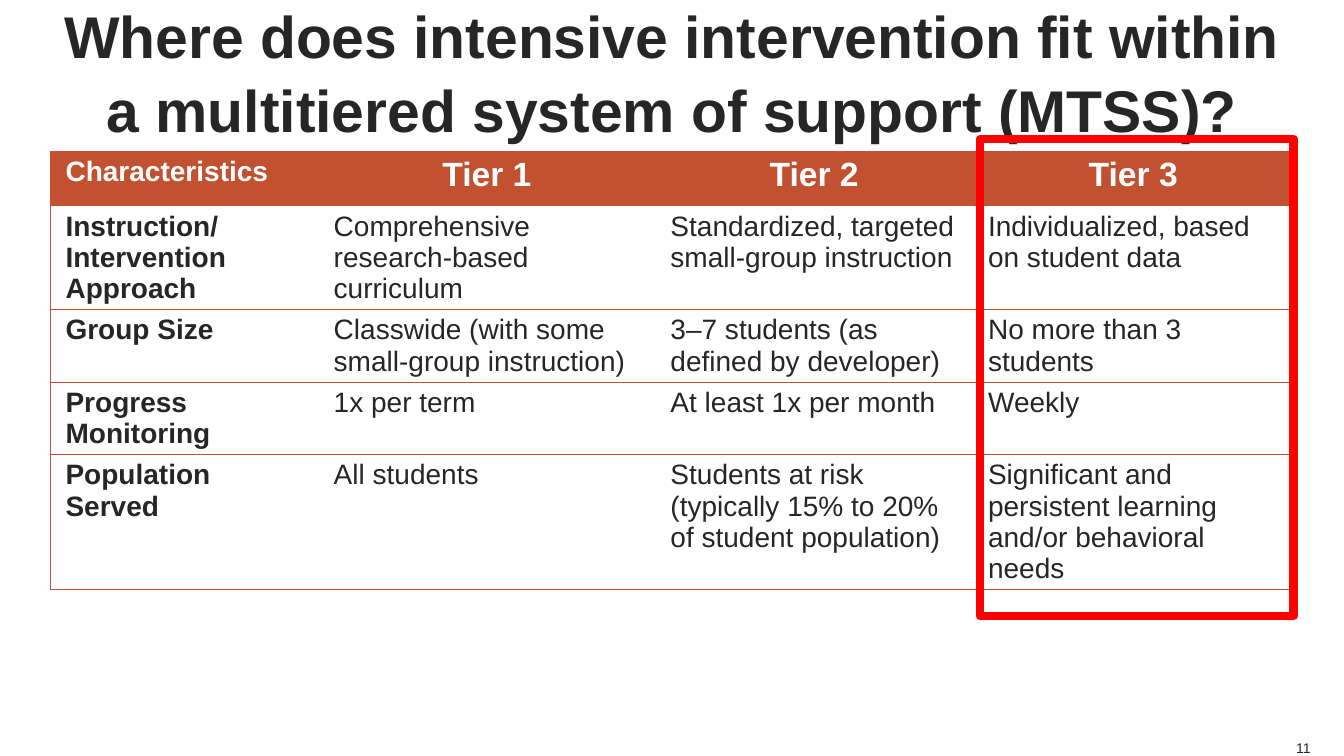
from pptx import Presentation
from pptx.dml.color import RGBColor
from pptx.enum.shapes import MSO_SHAPE
from pptx.enum.text import MSO_ANCHOR, PP_ALIGN
from pptx.oxml import parse_xml
from pptx.oxml.ns import nsdecls
from pptx.util import Inches, Pt

LEFT, CENTER, RIGHT = PP_ALIGN.LEFT, PP_ALIGN.CENTER, PP_ALIGN.RIGHT
TOP, MIDDLE, BOTTOM = MSO_ANCHOR.TOP, MSO_ANCHOR.MIDDLE, MSO_ANCHOR.BOTTOM
RECTANGLE = MSO_SHAPE.RECTANGLE
TITLE_ONLY = 5

COLUMN_WIDTHS = [2.66, 3.34, 3.15, 3.18]
ROW_HEIGHTS = [0.54, 0.66, 0.6, 0.58, 0.85]
TIERS = [
    ["Characteristics", "Tier 1", "Tier 2", "Tier 3"],
    ["Instruction/\nIntervention Approach",
     "Comprehensive research-based curriculum",
     "Standardized, targeted small-group instruction",
     "Individualized, based on student data"],
    ["Group Size",
     "Classwide (with some small-group instruction)",
     "3–7 students (as defined by developer)",
     "No more than 3 students"],
    ["Progress Monitoring", "1x per term", "At least 1x per month", "Weekly"],
    ["Population Served",
     "All students",
     "Students at risk (typically 15% to 20% of student population)",
     "Significant and persistent learning and/or behavioral needs"],
]


def rgb(value):
    return RGBColor.from_string(value)


def write(frame, text, size=20, color="262626", bold=False, align=LEFT,
          spacing=None):
    """Fill a text frame, one paragraph for each line of text."""
    for index, line in enumerate(text.split("\n")):
        paragraph = frame.add_paragraph() if index else frame.paragraphs[0]
        paragraph.alignment = align
        paragraph.line_spacing = spacing
        run = paragraph.add_run()
        run.text = line
        run.font.name = "Arial"
        run.font.size = Pt(size)
        run.font.bold = bold
        run.font.color.rgb = rgb(color)


class TierSlide:
    RUST = "C25131"
    WHITE = "FFFFFF"
    RED = "FF0000"

    def __init__(self, deck):
        self.slide = deck.slides.add_slide(deck.slide_layouts[TITLE_ONLY])
        self.shapes = self.slide.shapes

    def place(self, shape, box):
        shape.left, shape.top, shape.width, shape.height = map(Inches, box)

    def frame(self, shape, anchor, wrap=True):
        frame = shape.text_frame
        frame.margin_left = frame.margin_right = 0
        frame.margin_top = frame.margin_bottom = 0
        frame.vertical_anchor = anchor
        frame.word_wrap = wrap
        return frame

    def title(self, text, box):
        heading = self.shapes.title
        self.place(heading, box)
        write(self.frame(heading, MIDDLE), text, size=42, bold=True,
              align=CENTER, spacing=1.04)

    def borders(self, cell, sides):
        """Rule the named sides in rust and clear the others."""
        properties = cell._tc.get_or_add_tcPr()
        for index, side in enumerate("LRTB"):
            paint = "<a:noFill/>"
            if side in sides:
                paint = (f'<a:solidFill><a:srgbClr val="{self.RUST}"/>'
                         "</a:solidFill>")
            properties.insert(index, parse_xml(
                f'<a:ln{side} {nsdecls("a")} w="{Pt(0.5)}">{paint}</a:ln{side}>'))

    def table(self, rows, box, widths, heights):
        table = self.shapes.add_table(
            len(rows), len(widths), *map(Inches, box)).table
        for column, width in zip(table.columns, widths):
            column.width = Inches(width)
        for row, height in zip(table.rows, heights):
            row.height = Inches(height)
        for r, texts in enumerate(rows):
            for c, text in enumerate(texts):
                cell = table.cell(r, c)
                header, label = r == 0, c == 0
                cell.margin_left = cell.margin_right = Inches(0.15)
                cell.margin_top = cell.margin_bottom = Inches(0.05)
                cell.vertical_anchor = TOP
                if header:
                    cell.fill.solid()
                    cell.fill.fore_color.rgb = rgb(self.RUST)
                else:
                    cell.fill.background()
                write(cell.text_frame, text,
                      size=24 if header and not label else 20,
                      color=self.WHITE if header else "262626",
                      bold=header or label,
                      align=CENTER if header and not label else LEFT)
                outer = {0: "L", len(texts) - 1: "R"}.get(c, "")
                self.borders(cell, "TB" + outer)

    def highlight(self, box):
        outline = self.shapes.add_shape(RECTANGLE, *map(Inches, box))
        outline.shadow.inherit = False
        outline.fill.background()
        outline.line.color.rgb = rgb(self.RED)
        outline.line.width = Pt(6)

    def page_number(self, text, box):
        number = self.shapes.add_textbox(*map(Inches, box))
        write(self.frame(number, BOTTOM, wrap=False), text, size=10,
              align=RIGHT)


def main():
    deck = Presentation()
    deck.slide_width, deck.slide_height = Inches(13.33), Inches(7.5)
    page = TierSlide(deck)

    # Heading
    page.title("Where does intensive intervention fit within a multitiered "
               "system of support (MTSS)?", (0.5, 0, 12.33, 1.4))

    # Comparison of the tiers, with Tier 3 framed
    page.table(TIERS, (0.5, 1.5, 12.33, 4.6), COLUMN_WIDTHS, ROW_HEIGHTS)
    page.highlight((9.72, 1.38, 3.11, 4.73))

    # Footer
    page.page_number("11", (12.83, 7.33, 0.17, 0.17))

    deck.save("out.pptx")


if __name__ == "__main__":
    main()
